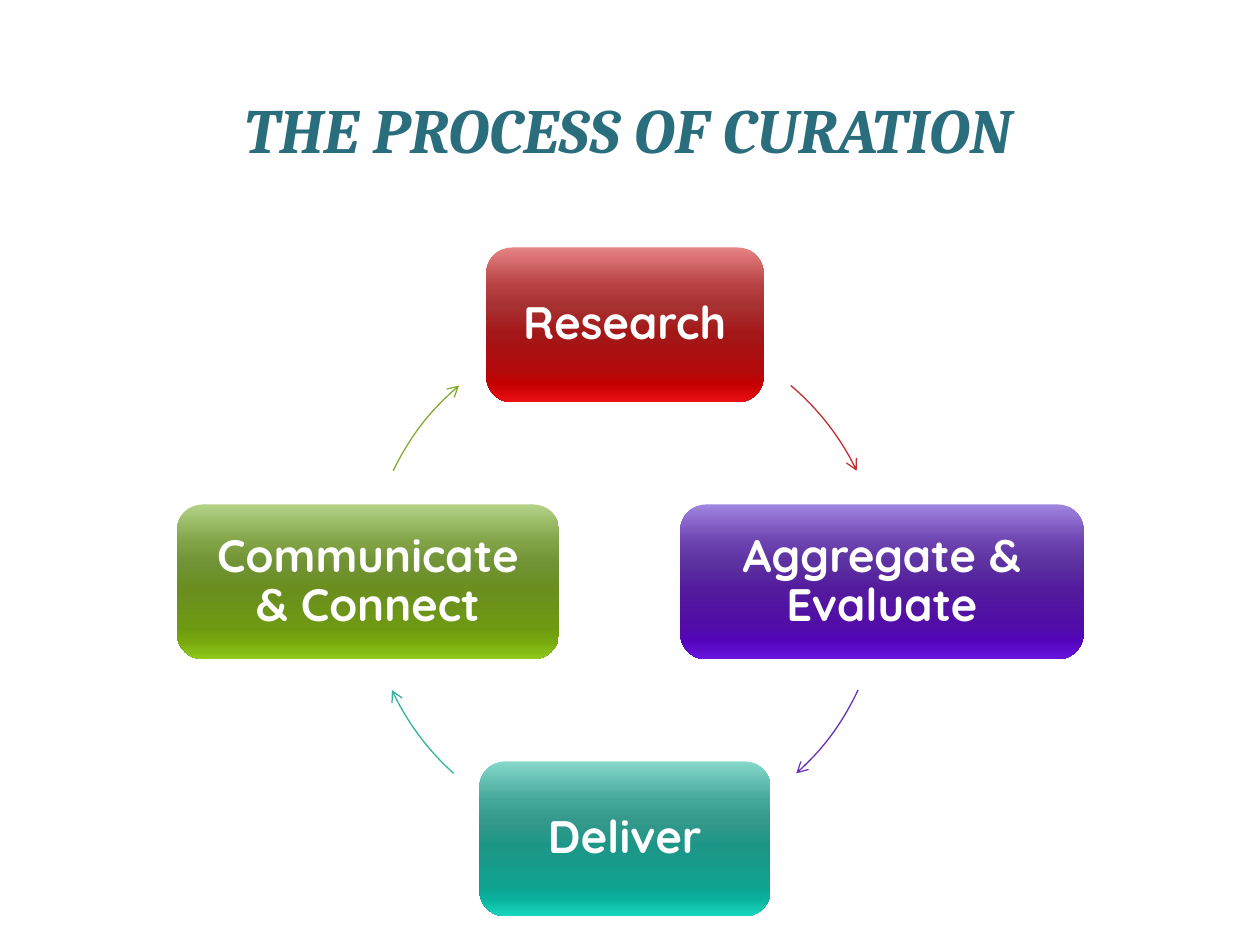
import math

import pptx
import pptx.dml.color
import pptx.enum.shapes
import pptx.enum.text
import pptx.oxml
import pptx.oxml.ns
import pptx.util

Cm, Pt = pptx.util.Cm, pptx.util.Pt
SHAPE = pptx.enum.shapes.MSO_SHAPE

# Circle that carries the boxes and arrows, in cm
CX, CY, RADIUS = 12.6, 11.73, 5.18
BOX_H = 3.12
STOPS = (0, 25, 38, 55, 80, 88, 100)

# label, width, angle of the box, gradient, arrow colour, arrow start and end angle
STEPS = [
    ("Research", 5.59, 270, "E68383 B64041 A73131 A41718 B2090A C40001 EB0F10",
     "C32D2E", 310.2, 334.4),
    ("Aggregate & Evaluate", 8.13, 0, "A085DF 6B41AF 5C32A0 531A9D 510CA9 5404BB 6914DF",
     "6C2FBA", 24.9, 48.2),
    ("Deliver", 5.87, 90, "86D8CA 43A89A 34998B 1C9687 10A18F 09B19D 18D5BD",
     "31B2A2", 131.8, 155.1),
    ("Communicate & Connect", 7.7, 180, "B3D288 80A144 719235 6B8E1F 6E9913 77A80D 90CA1C",
     "84AA33", 205.6, 229.8),
]


def rgb(value):
    return pptx.dml.color.RGBColor.from_string(value)


def xml(tag, attrs, inner=""):
    ns = pptx.oxml.ns.nsdecls("a")
    return pptx.oxml.parse_xml(f"<a:{tag} {ns} {attrs}>{inner}</a:{tag}>")


class Deck:
    title_font = {"name": "Cambria", "size": Pt(36), "bold": True, "italic": True}
    box_font = {"name": "Quicksand", "size": Pt(26), "bold": True}

    def __init__(self, width, height):
        self.prs = pptx.Presentation()
        self.prs.slide_width, self.prs.slide_height = Cm(width), Cm(height)
        self.s = self.prs.slides.add_slide(self.prs.slide_layouts[6])

    def text(self, sp, text, font, color, inset, spacing=1.0):
        tf = sp.text_frame
        frame = {"word_wrap": True, "vertical_anchor": pptx.enum.text.MSO_ANCHOR.MIDDLE}
        frame.update({f"margin_{side}": Cm(inset)
                      for side in ("left", "right", "top", "bottom")})
        for key, value in frame.items():
            setattr(tf, key, value)
        p = tf.paragraphs[0]
        p.alignment, p.line_spacing = pptx.enum.text.PP_ALIGN.CENTER, spacing
        r = p.add_run()
        r.text = text
        for key, value in font.items():
            setattr(r.font, key, value)
        r.font.color.rgb = rgb(color)

    def title(self, text, x, y, w, h):
        sp = self.s.shapes.add_textbox(Cm(x), Cm(y), Cm(w), Cm(h))
        self.text(sp, text, self.title_font, "2A6D7D", 0.25)

    def box(self, text, cx, cy, w, colors):
        sp = self.s.shapes.add_shape(SHAPE.ROUNDED_RECTANGLE, Cm(cx - w / 2),
                                     Cm(cy - BOX_H / 2), Cm(w), Cm(BOX_H))
        sp.shadow.inherit = False
        sp.line.fill.background()
        # Vertical gradient with seven stops
        sp.fill.gradient()
        sp.fill.gradient_angle = 270
        stops = sp._element.spPr.find(".//" + pptx.oxml.ns.qn("a:gsLst"))
        stops.clear()
        for pos, color in zip(STOPS, colors.split()):
            stops.append(xml("gs", f'pos="{pos * 1000}"', f'<a:srgbClr val="{color}"/>'))
        self.text(sp, text, self.box_font, "FFFFFF", 0.43, 0.9)

    def arc_arrow(self, color, start, end):
        sp = self.s.shapes.add_shape(SHAPE.ARC, Cm(CX - RADIUS), Cm(CY - RADIUS),
                                     Cm(2 * RADIUS), Cm(2 * RADIUS))
        sp.shadow.inherit = False
        sp.fill.background()
        # Angles are stored in 60000ths of a degree, adjustments in 100000ths
        for i, angle in enumerate((start, end)):
            sp.adjustments[i] = angle * 0.6
        sp.line.color.rgb = rgb(color)
        sp.line.width = Pt(0.75)
        sp.line._get_or_add_ln().append(xml("tailEnd", 'type="arrow"'))


def main():
    deck = Deck(25.4, 19.05)

    # Title
    deck.title("THE PROCESS OF CURATION", 1.19, 1.14, 22.94, 2.9)

    # Cycle: each step sits on the circle, followed by its arrow
    for label, width, angle, colors, line, start, end in STEPS:
        a = math.radians(angle)
        deck.box(label, CX + RADIUS * math.cos(a), CY + RADIUS * math.sin(a), width, colors)
        deck.arc_arrow(line, start, end)

    deck.prs.save("out.pptx")


if __name__ == "__main__":
    main()
